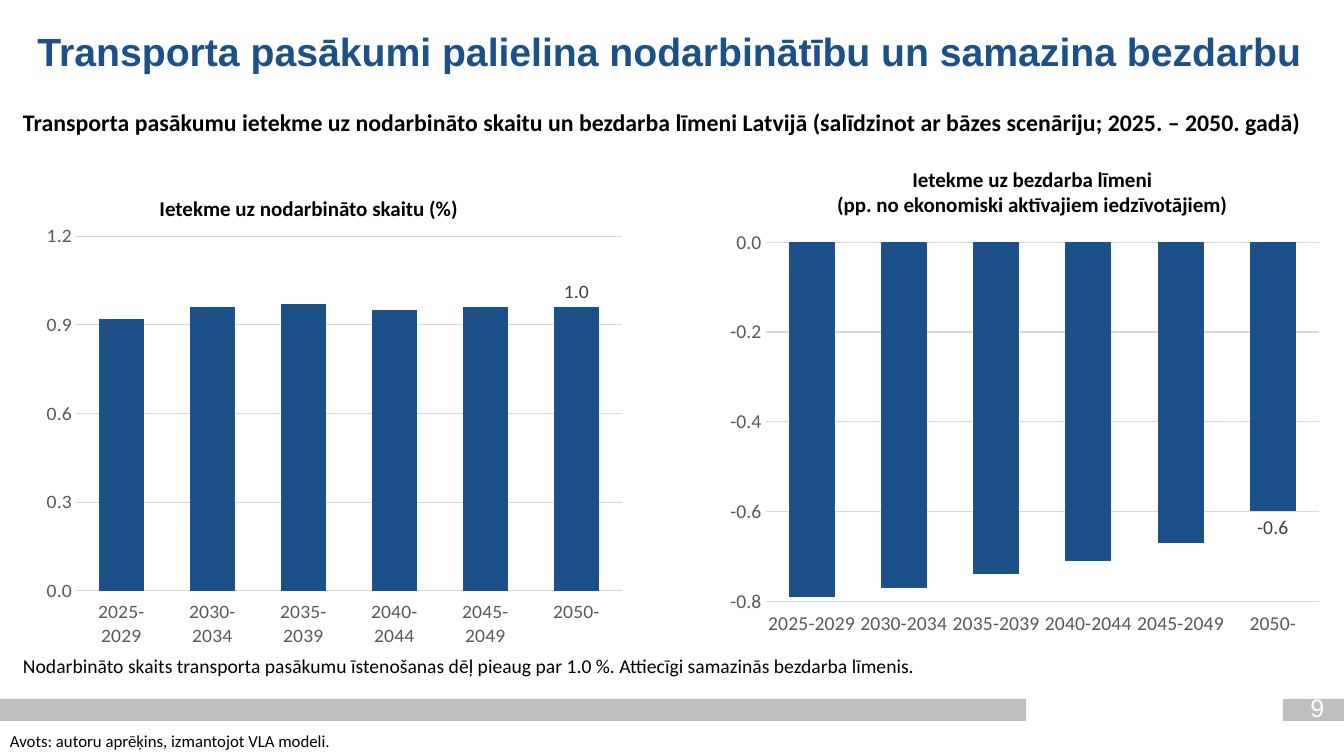
import pptx
import pptx.chart.data
import pptx.dml.color
import pptx.enum.chart
import pptx.enum.shapes
import pptx.enum.text
import pptx.oxml
import pptx.oxml.ns
import pptx.util

Cm = pptx.util.Cm
Pt = pptx.util.Pt
RGBColor = pptx.dml.color.RGBColor
ALIGN = pptx.enum.text.PP_ALIGN
ANCHOR = pptx.enum.text.MSO_ANCHOR

BLUE = RGBColor(0x1B, 0x50, 0x89)
BLACK = RGBColor(0, 0, 0)
WHITE = RGBColor(255, 255, 255)
BAR = RGBColor(0xBF, 0xBF, 0xBF)
GRID = RGBColor(0xD9, 0xD9, 0xD9)
AXIS = RGBColor(0x59, 0x59, 0x59)
LABEL = RGBColor(0x40, 0x40, 0x40)

WIDE, HIGH = 33.87, 19.05
YEARS = ["2025-2029", "2030-2034", "2035-2039",
         "2040-2044", "2045-2049", "2050-"]
DIGITS = "#,##0.0"


def set_font(font, size, color, bold=False, name="Calibri"):
    font.size = Pt(size)
    font.name = name
    font.bold = bold
    font.color.rgb = color


def place(shape, box):
    shape.left, shape.top, shape.width, shape.height = map(Cm, box)


def fill_text(shape, text, size, color=BLACK, bold=False, name="Calibri",
              align=ALIGN.LEFT, anchor=ANCHOR.TOP, space=1.0):
    frame = shape.text_frame
    frame.text = text
    frame.word_wrap = True
    frame.auto_size = pptx.enum.text.MSO_AUTO_SIZE.NONE
    frame.vertical_anchor = anchor
    for para in frame.paragraphs:
        para.alignment = align
        para.line_spacing = space
        for run in para.runs:
            set_font(run.font, size, color, bold, name)


def add_text(slide, box, text, size, **style):
    fill_text(slide.shapes.add_textbox(*map(Cm, box)), text, size, **style)


def draw_head(slide, box, title, lead):
    left, top, width, height = box
    place(slide.shapes.title, (left + 0.36, top, width, 1.85))
    fill_text(slide.shapes.title, title, 28, color=BLUE, bold=True,
              name="Arial", space=0.9)
    add_text(slide, (left, top + 1.83, width, height - 1.83), lead, 17,
             bold=True, space=1.1)


def set_plot(chart, plot):
    """Fix the inner plot area as fractions of the chart frame."""
    parts = "".join(f'<c:{key} val="{val}"/>' for key, val in zip("xywh", plot))
    layout = pptx.oxml.parse_xml(
        f'<c:layout {pptx.oxml.ns.nsdecls("c")}><c:manualLayout>'
        '<c:layoutTarget val="inner"/><c:xMode val="edge"/>'
        f'<c:yMode val="edge"/>{parts}</c:manualLayout></c:layout>')
    area = chart._chartSpace.chart.plotArea
    for old in area.findall(pptx.oxml.ns.qn("c:layout")):
        area.remove(old)
    area.insert(0, layout)


def style_axes(chart, scale):
    low, high, step = scale
    years, values = chart.category_axis, chart.value_axis
    for axis in (years, values):
        axis.major_tick_mark = pptx.enum.chart.XL_TICK_MARK.NONE
        axis.minor_tick_mark = pptx.enum.chart.XL_TICK_MARK.NONE
        set_font(axis.tick_labels.font, 14, AXIS)
    years.tick_label_position = pptx.enum.chart.XL_TICK_LABEL_POSITION.LOW
    values.has_major_gridlines = True
    for line in (years.format.line, values.major_gridlines.format.line):
        line.color.rgb = GRID
        line.width = Pt(0.75)
    values.format.line.fill.background()
    values.minimum_scale, values.maximum_scale = low, high
    values.major_unit = step
    values.tick_labels.number_format = DIGITS
    values.tick_labels.number_format_is_linked = False


def draw_panel(slide, box, title, wide, align, values, scale, plot):
    """Draw a column chart in the box, with its heading just above."""
    left, top = box[:2]
    data = pptx.chart.data.CategoryChartData(number_format=DIGITS)
    data.categories = YEARS
    data.add_series("Series 1", values)
    chart = slide.shapes.add_chart(
        pptx.enum.chart.XL_CHART_TYPE.COLUMN_CLUSTERED,
        *map(Cm, box), data).chart
    chart.has_title = False
    chart.has_legend = False
    set_font(chart.font, 14, BLACK)
    style_axes(chart, scale)
    set_plot(chart, plot)

    bars = chart.plots[0]
    bars.gap_width = 100
    bars.vary_by_categories = False
    series = bars.series[0]
    series.invert_if_negative = False
    series.format.fill.solid()
    series.format.fill.fore_color.rgb = BLUE
    series.data_labels.show_value = False
    label = series.points[len(values) - 1].data_label
    set_font(label.font, 14, LABEL)
    label.position = pptx.enum.chart.XL_LABEL_POSITION.OUTSIDE_END

    tall = 0.23 + 0.66 * len(title.split("\n"))
    add_text(slide, (left + 3.08, top + 0.15 - tall, wide, tall), title, 15,
             bold=True, align=align)


def draw_foot(slide, box, note, source, number):
    left, top, width, height = box
    add_text(slide, (left + 0.33, top, 23.62, 0.86), note, 14)
    for start, wide in ((0, 25.86), (width - 1.54, 1.54)):
        bar = slide.shapes.add_shape(
            pptx.enum.shapes.MSO_SHAPE.RECTANGLE,
            *map(Cm, (left + start, top + 1.25, wide, 0.56)))
        bar.shadow.inherit = False
        bar.fill.solid()
        bar.fill.fore_color.rgb = BAR
        bar.line.fill.background()
    add_text(slide, (left + width - 1.51, top + 1.02, 1.68, 0.91), number, 18,
             color=WHITE, name="Arial", align=ALIGN.CENTER,
             anchor=ANCHOR.MIDDLE)
    add_text(slide, (left, top + height - 0.76, 8.86, 0.76), source, 12)


def main():
    deck = pptx.Presentation()
    deck.slide_width, deck.slide_height = Cm(WIDE), Cm(HIGH)
    slide = deck.slides.add_slide(deck.slide_layouts[5])
    draw_head(
        slide, (0.33, 0.69, 33.07, 2.87),
        "Transporta pasākumi palielina nodarbinātību un samazina bezdarbu",
        "Transporta pasākumu ietekme uz nodarbināto skaitu un bezdarba līmeni "
        "Latvijā (salīdzinot ar bāzes scenāriju; 2025. – 2050. gadā)")
    draw_panel(
        slide, (0.69, 5.54, 15.29, 10.77),
        "Ietekme uz nodarbināto skaitu (%)", 8.18, ALIGN.LEFT,
        (0.92, 0.96, 0.97, 0.95, 0.96, 0.96), (0, 1.2, 0.3),
        (0.08, 0.04, 0.9, 0.86))
    draw_panel(
        slide, (17.55, 5.46, 15.85, 10.77),
        "Ietekme uz bezdarba līmeni\n"
        "(pp. no ekonomiski aktīvajiem iedzīvotājiem)", 10.77, ALIGN.CENTER,
        (-0.79, -0.77, -0.74, -0.71, -0.67, -0.6), (-0.8, 0, 0.2),
        (0.11, 0.06, 0.88, 0.84))
    draw_foot(
        slide, (0, 16.36, WIDE, HIGH - 16.36),
        "Nodarbināto skaits transporta pasākumu īstenošanas dēļ pieaug par "
        "1.0 %. Attiecīgi samazinās bezdarba līmenis.",
        "Avots: autoru aprēķins, izmantojot VLA modeli.", "9")
    deck.save("out.pptx")


if __name__ == "__main__":
    main()
